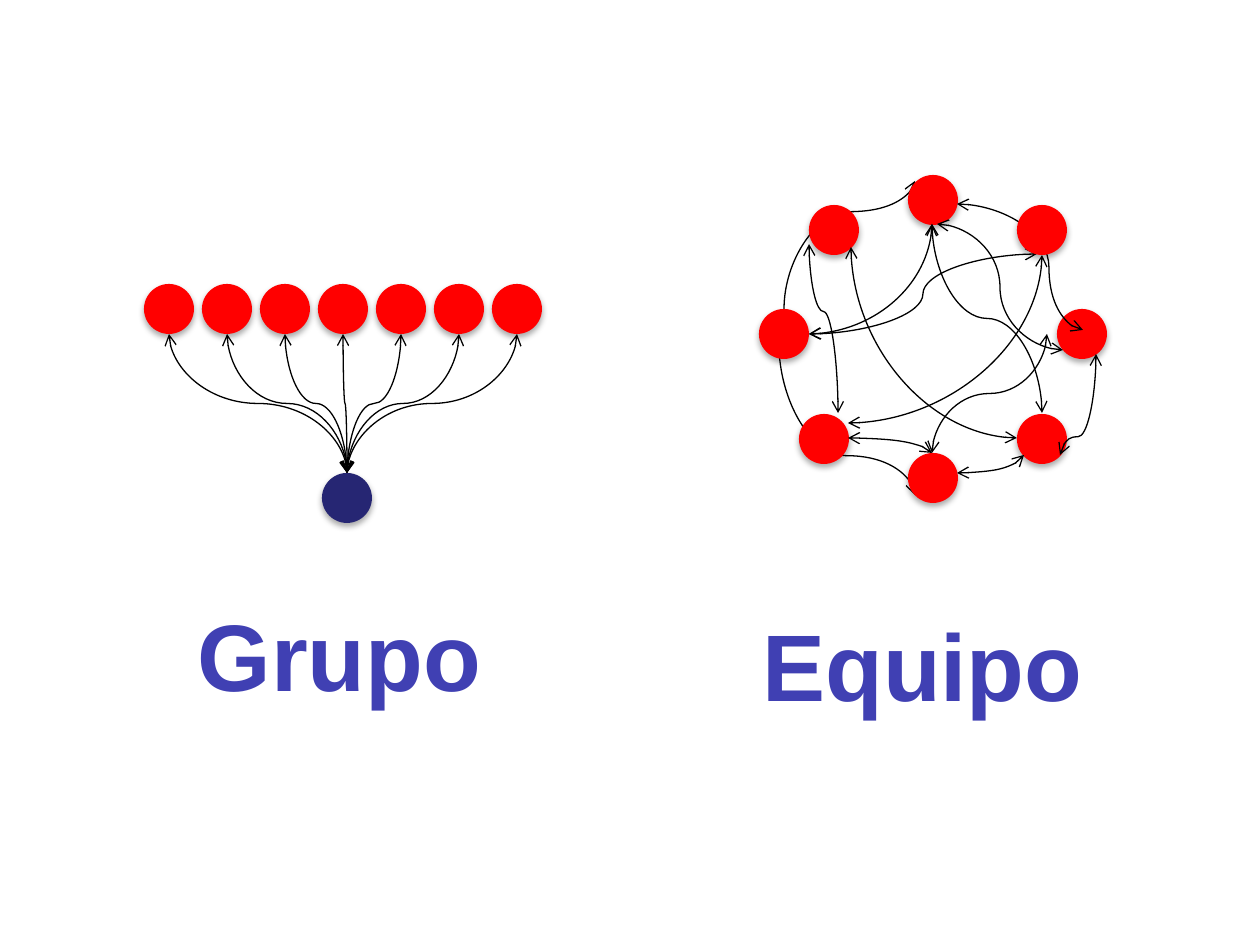
"""Build the slide that contrasts a group with a team."""
import pptx
import pptx.dml.color
import pptx.enum.shapes
import pptx.enum.text
import pptx.oxml
import pptx.oxml.ns
import pptx.util
import lxml.etree

PX = 914400 / 126
NS = pptx.oxml.ns.nsdecls("a")
qn = pptx.oxml.ns.qn
Sub = lxml.etree.SubElement
rgb = pptx.dml.color.RGBColor.from_string
RED, NAVY, BLACK = "FF0000", "262673", "000000"
SIZE = 50
SHADOW = (
    f'<a:effectLst {NS}><a:outerShdw blurRad="44450" dist="27940" dir="5400000" '
    f'algn="ctr" rotWithShape="0"><a:srgbClr val="{BLACK}"><a:alpha val="32000"/>'
    "</a:srgbClr></a:outerShdw></a:effectLst>"
)
SHADE = (
    f'<a:gradFill {NS}><a:gsLst><a:gs pos="0"><a:srgbClr val="00005B"/></a:gs>'
    '<a:gs pos="78000"><a:srgbClr val="4040B3"/></a:gs>'
    '<a:gs pos="100000"><a:srgbClr val="EFEFF7"/></a:gs></a:gsLst>'
    '<a:lin ang="5400000" scaled="0"/></a:gradFill>'
)

deck = pptx.Presentation()
deck.slide_width, deck.slide_height = int(1260 * PX), int(945 * PX)
slide = deck.slides.add_slide(deck.slide_layouts[6])


def dot(x, y, color):
    kind = pptx.enum.shapes.MSO_SHAPE.FLOWCHART_CONNECTOR
    shape = slide.shapes.add_shape(kind, *[int(n * PX) for n in (x, y, SIZE, SIZE)])
    shape.fill.solid()
    shape.fill.fore_color.rgb = rgb(color)
    shape.line.fill.background()
    shape.element.spPr.append(pptx.oxml.parse_xml(SHADOW))


def curve(x1, y1, x2, y2, way="V", bend=0.5, ends=("headEnd", "tailEnd")):
    """Draw a curve leaving along way; a bend of None gives a single arc."""
    turn = 0
    if way == "V":
        dx, dy = x2 - x1, y2 - y1
        turn = 90 if dx * dy < 0 else 270
        side = 1 if turn == 90 else -1
        mx, my = (x1 + x2) / 2, (y1 + y2) / 2
        x1, x2 = mx - side * dy / 2, mx + side * dy / 2
        y1, y2 = my + side * dx / 2, my - side * dx / 2
    kind = pptx.enum.shapes.MSO_CONNECTOR.CURVE
    link = slide.shapes.add_connector(kind, *[int(n * PX) for n in (x1, y1, x2, y2)])
    link.line.color.rgb = rgb(BLACK)
    link.line.width = pptx.util.Pt(0.75)
    props = link.element.spPr
    if turn:
        props.find(qn("a:xfrm")).set("rot", str(turn * 60000))
    geom = props.find(qn("a:prstGeom"))
    if bend is None:
        geom.set("prst", "curvedConnector2")
    else:
        guide = Sub(geom.find(qn("a:avLst")), qn("a:gd"))
        guide.set("name", "adj1")
        guide.set("fmla", f"val {round(bend * 100000)}")
    for end in ends:
        Sub(props.find(qn("a:ln")), qn("a:" + end)).set("type", "arrow")
    Sub(props, qn("a:effectLst"))


curve(779, 344, 915, 495, "V", 0.74)
curve(784, 309, 915, 181, "V", 0.76, ["tailEnd"])

row = [144 + 58 * i for i in range(7)]
for x in row:
    dot(x, 284, RED)
dot(322, 473, NAVY)
for x in row:
    curve(x + SIZE // 2, 334, 347, 473)

ring = [(759, 309), (1057, 309), (908, 453), (809, 205),
        (1017, 414), (799, 414), (908, 175)]
for x, y in ring:
    dot(x, y, RED)

links = [
    (851, 247, 1017, 438, "V", None),
    (1042, 255, 848, 423, "V", None),
    (937, 224, 1063, 350, "H", 0.5),
    (1037, 254, 809, 334, "H", 0.5),
    (932, 453, 848, 438, "V", None),
    (932, 453, 1047, 334, "V", 0.5),
    (809, 244, 838, 413, "V", 0.4),
    (809, 334, 932, 224, "H", None),
    (1042, 413, 932, 224, "V", 0.5),
    (957, 204, 1083, 330, "H", 0.73),
    (957, 473, 1024, 455, "H", None),
    (1096, 354, 1060, 455, "V", 0.82),
]
for link in links:
    curve(*link)
dot(1017, 205, RED)

for word, x, y, w in [("Grupo", 184, 591, 311), ("Equipo", 748, 601, 349)]:
    box = slide.shapes.add_textbox(*[int(n * PX) for n in (x, y, w, 127)])
    frame = box.text_frame
    frame.word_wrap = False
    frame.auto_size = pptx.enum.text.MSO_AUTO_SIZE.SHAPE_TO_FIT_TEXT
    para = frame.paragraphs[0]
    para.text = word
    para.alignment = pptx.enum.text.PP_ALIGN.CENTER
    font = para.font
    font._element.append(pptx.oxml.parse_xml(SHADE))
    font.name = "Arial"
    font.size = pptx.util.Pt(54)
    font.bold = True

deck.save("out.pptx")
